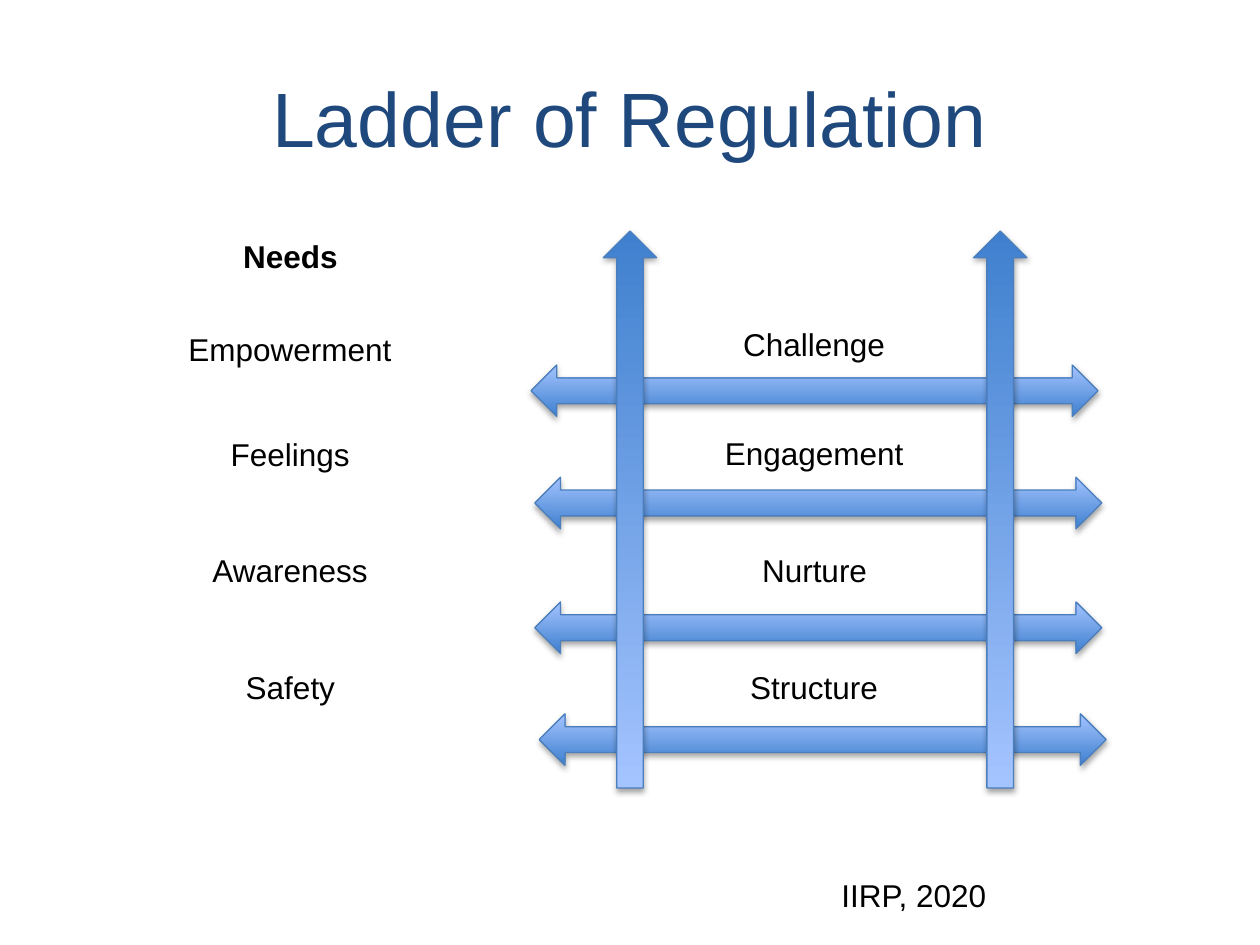
from dataclasses import dataclass
from lxml.etree import SubElement as Sub
from pptx import Presentation
from pptx.dml.color import RGBColor
from pptx.enum.shapes import MSO_SHAPE as Form
from pptx.enum.text import MSO_ANCHOR as Anchor, MSO_AUTO_SIZE as Auto, PP_ALIGN as Align
from pptx.oxml.ns import qn
from pptx.util import Inches, Pt

NAVY = RGBColor(0x1F, 0x49, 0x7D)
BLACK = RGBColor(0, 0, 0)
DEEP = RGBColor(0x3F, 0x80, 0xCE)
PALE = RGBColor(0xA4, 0xC4, 0xFF)
EDGE = RGBColor(0x4B, 0x7E, 0xBC)

WIDE, HIGH = Inches(10), Inches(7.5)
COLS, ROWS = 100, 75
NEED, STEP, CITE = 23.12, 64.7, 72.6
THICK, LONG = 4.1, 45
RAIL, TALL, TOP = 4.24, 44.2, 18.33


@dataclass
class Label:
    text: str
    mid: float
    top: float
    wide: float
    bold: bool = False


@dataclass
class Arrow:
    form: Form
    left: float
    top: float
    wide: float
    high: float
    turn: int = 0


LABELS = [
    Label("IIRP, 2020", CITE, 69, 13.6),
    Label("Needs", NEED, 18.33, 9.6, True),
    Label("Empowerment", NEED, 25.7, 18.3),
    Label("Feelings", NEED, 34, 11.6),
    Label("Awareness", NEED, 43.25, 14.5),
    Label("Safety", NEED, 52.5, 9.2),
    Label("Challenge", STEP, 25.33, 13.4),
    Label("Engagement", STEP, 33.95, 16.3),
    Label("Nurture", STEP, 43.25, 10.4),
    Label("Structure", STEP, 52.5, 12.3),
]

RUNGS = [(42.15, 28.97), (42.45, 37.87), (42.45, 47.77), (42.8, 56.65)]
RAILS = [77.26, 47.88]

ARROWS = [Arrow(Form.LEFT_RIGHT_ARROW, x, y, LONG, THICK) for x, y in RUNGS]
ARROWS += [Arrow(Form.DOWN_ARROW, x, TOP, RAIL, TALL, 180) for x in RAILS]


def place(left: float, top: float, wide: float, high: float) -> tuple:
    return (int(left * WIDE / COLS), int(top * HIGH / ROWS),
            int(wide * WIDE / COLS), int(high * HIGH / ROWS))


def write(frame, text: str, size: int = 18, color: RGBColor = BLACK,
          bold: bool = False, align: Align = Align.LEFT) -> None:
    para = frame.paragraphs[0]
    para.alignment = align
    run = para.add_run()
    run.text = text
    font = run.font
    font.name, font.size, font.bold = "Arial", Pt(size), bold
    font.color.rgb = color


def shade(shape) -> None:
    shape.shadow.inherit = False
    glow = Sub(shape.element.spPr.find(qn("a:effectLst")), qn("a:outerShdw"),
               blurRad="40000", dist="23000", dir="5400000", rotWithShape="0")
    tint = Sub(glow, qn("a:srgbClr"), val="000000")
    Sub(tint, qn("a:alpha"), val="35000")


def label(slide, item: Label) -> None:
    box = slide.shapes.add_textbox(
        *place(item.mid - item.wide / 2, item.top, item.wide, 4))
    frame = box.text_frame
    frame.word_wrap = False
    frame.auto_size = Auto.SHAPE_TO_FIT_TEXT
    write(frame, item.text, bold=item.bold)


def arrow(slide, item: Arrow) -> None:
    shape = slide.shapes.add_shape(
        item.form, *place(item.left, item.top, item.wide, item.high))
    shape.rotation = item.turn
    fill = shape.fill
    fill.gradient()
    fill.gradient_angle = 90
    for stop, color, spot in zip(fill.gradient_stops, (DEEP, PALE), (0, 1)):
        stop.color.rgb = color
        stop.position = spot
    shape.line.color.rgb = EDGE
    shape.line.width = Pt(0.75)
    shade(shape)


def main() -> None:
    deck = Presentation()
    deck.slide_width, deck.slide_height = WIDE, HIGH
    slide = deck.slides.add_slide(deck.slide_layouts[5])
    title = slide.shapes.title
    title.left, title.top, title.width, title.height = place(5, 3, 90, 12.5)
    title.text_frame.vertical_anchor = Anchor.MIDDLE
    write(title.text_frame, "Ladder of Regulation", size=44, color=NAVY,
          align=Align.CENTER)
    for item in LABELS:
        label(slide, item)
    for item in ARROWS:
        arrow(slide, item)
    deck.save("out.pptx")


if __name__ == "__main__":
    main()
